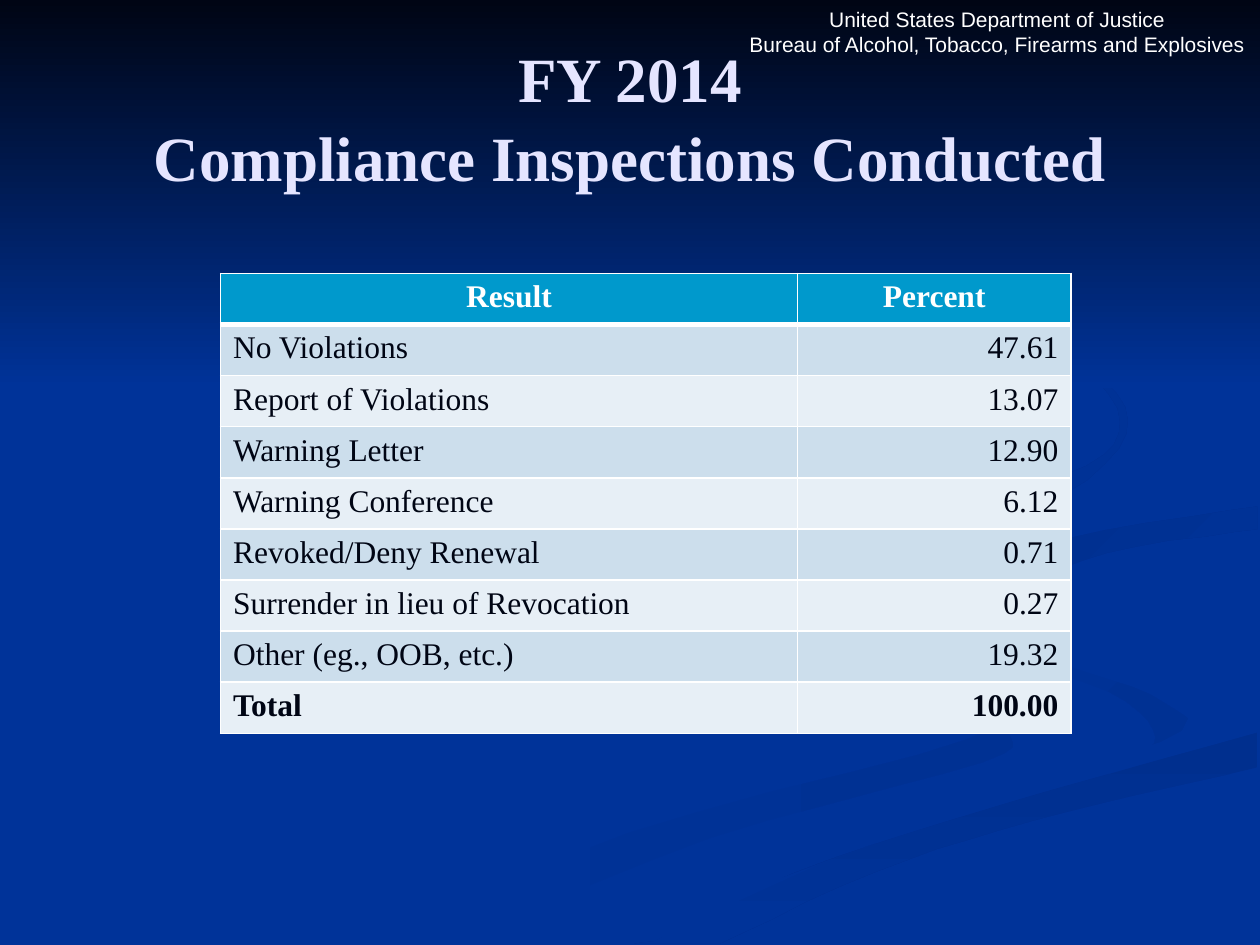
from dataclasses import dataclass

from lxml.etree import SubElement
from pptx import Presentation
from pptx.dml.color import RGBColor as Rgb
from pptx.enum.shapes import MSO_SHAPE as Shape
from pptx.enum.text import MSO_ANCHOR as Anchor, PP_ALIGN as Align
from pptx.oxml.ns import qn
from pptx.util import Pt

PX = 9144
CURVE_STEPS = 5


@dataclass(frozen=True)
class Theme:
    blue: str = "003399"
    shade: str = "002F8E"
    soft_shade: str = "003193"
    ink: str = "000514"
    white: str = "FFFFFF"
    lavender: str = "E5E5FF"
    header: str = "0099CC"
    bands: tuple = ("CCDEEC", "E7EFF6")
    sans: str = "Arial"
    serif: str = "Times New Roman"
    agency_size: int = 12
    title_size: int = 36
    table_size: int = 18


THEME = Theme()

RIBBONS = [
    (THEME.blue, THEME.soft_shade, 0, [
        [(781, 553), (642, 507), (575, 459)],
        [(570, 468), (611, 499), (781, 556), (767, 587), (499, 661), (300, 749)],
        [(361, 749), (564, 665), (780, 605), (800, 581), (781, 553)]]),
    (THEME.blue, THEME.soft_shade, 45, [
        [(943, 570), (870, 530), (758, 498), (724, 464)],
        [(724, 466), (755, 505), (880, 549), (917, 585), (894, 605)],
        [(894, 605), (932, 589), (943, 570)]]),
    (THEME.shade, THEME.blue, 90, [
        [(503, 749), (571, 749)],
        [(571, 749), (695, 692), (821, 651), (998, 609)],
        [(998, 581), (797, 638), (630, 693), (519, 747)]]),
    (THEME.blue, THEME.blue, 0, [
        [(999, 387), (770, 427), (725, 464), (793, 509), (943, 570),
         (812, 625), (477, 749)],
        [(519, 747), (696, 669), (999, 581)],
        [(999, 538), (848, 503), (781, 463), (865, 424), (999, 402)]]),
    (THEME.shade, THEME.blue, 45, [
        [(998, 402), (849, 427), (781, 460), (826, 496)],
        [(826, 496), (805, 472), (878, 439), (998, 420)]]),
    (THEME.shade, THEME.blue, 45, [
        [(762, 233), (864, 291), (894, 344), (825, 402), (683, 430),
         (593, 470), (622, 500)],
        [(622, 500), (577, 462), (649, 420), (842, 378), (889, 335),
         (846, 279), (762, 233)]]),
]

RESULTS = {
    "Result": "Percent",
    "No Violations": "47.61",
    "Report of Violations": "13.07",
    "Warning Letter": "12.90",
    "Warning Conference": "6.12",
    "Revoked/Deny Renewal": "0.71",
    "Surrender in lieu of Revocation": "0.27",
    "Other (eg., OOB, etc.)": "19.32",
    "Total": "100.00",
}


def scaled(box):
    return [length * PX for length in box]


def set_all(target, values):
    for name, value in values.items():
        setattr(target, name, value)


def format_paragraph(paragraph, color, align, **font):
    paragraph.alignment = align
    set_all(paragraph.font, font)
    paragraph.font.color.rgb = Rgb.from_string(color)


def paint_gradient(shape, start, end, angle):
    shape.shadow.inherit = False
    shape.line.fill.background()
    shape.fill.gradient()
    shape.fill.gradient_angle = -angle % 360
    for stop, color, position in zip(shape.fill.gradient_stops, (start, end), (0, 1)):
        stop.color.rgb = Rgb.from_string(color)
        stop.position = position


def spline(before, start, end, after, t):
    return (start + t * (end - before) / 2
            + t ** 2 * (2 * before - 5 * start + 4 * end - after) / 2
            + t ** 3 * (3 * start - before - 3 * end + after) / 2)


def smooth_edge(points):
    padded = [points[0], *points, points[-1]]
    curve = [points[0]]
    for window in zip(padded, padded[1:], padded[2:], padded[3:]):
        for step in range(1, CURVE_STEPS + 1):
            curve.append(tuple(round(spline(*axis, step / CURVE_STEPS))
                               for axis in zip(*window)))
    return curve


def add_backdrop(slide, box):
    left, top, width, height = scaled(box)
    slide.background.fill.solid()
    slide.background.fill.fore_color.rgb = Rgb.from_string(THEME.blue)
    for start, end, angle, edges in RIBBONS:
        outline = [point for edge in edges for point in smooth_edge(edge)]
        builder = slide.shapes.build_freeform(*outline[0], scale=PX)
        builder.add_line_segments(outline[1:], close=True)
        paint_gradient(builder.convert_to_shape(left, top), start, end, angle)
    sky = slide.shapes.add_shape(Shape.RECTANGLE, left, top, width, 308 * PX)
    paint_gradient(sky, THEME.ink, THEME.blue, 90)


def add_lines(slide, box, lines, anchor, color, space_before=0, **font):
    frame = slide.shapes.add_textbox(*scaled(box)).text_frame
    set_all(frame, {"word_wrap": True, "vertical_anchor": anchor,
                    "margin_left": 0, "margin_right": 0})
    frame.text = "\n".join(lines)
    for paragraph in frame.paragraphs:
        format_paragraph(paragraph, color, Align.CENTER, **font)
    frame.paragraphs[-1].space_before = Pt(space_before)


def add_borders(cell, widths):
    properties = cell._tc.get_or_add_tcPr()
    for side, width in widths.items():
        line = SubElement(properties, qn(f"a:ln{side}"), w=str(Pt(width)))
        fill = SubElement(line, qn("a:solidFill"))
        SubElement(fill, qn("a:srgbClr"), val=THEME.white)


def add_results_table(slide, box):
    table = slide.shapes.add_table(len(RESULTS), 2, *scaled(box)).table
    for column, width in zip(table.columns, (458, box[2] - 458)):
        column.width = width * PX
    for row, values in enumerate(RESULTS.items()):
        is_header = row == 0
        fill = THEME.header if is_header else THEME.bands[(row - 1) % 2]
        for column, value in enumerate(values):
            cell = table.cell(row, column)
            add_borders(cell, {"L": 1, "R": 1, "T": 3 if row == 1 else 1,
                               "B": 3 if is_header else 1})
            cell.fill.solid()
            cell.fill.fore_color.rgb = Rgb.from_string(fill)
            cell.text = value
            align = Align.CENTER if is_header else (Align.LEFT, Align.RIGHT)[column]
            format_paragraph(cell.text_frame.paragraphs[0],
                             THEME.white if is_header else THEME.ink, align,
                             name=THEME.serif, size=Pt(THEME.table_size),
                             bold=row in (0, len(RESULTS) - 1))


def main():
    presentation = Presentation()
    set_all(presentation, {"slide_width": 1000 * PX, "slide_height": 750 * PX})
    slide = presentation.slides.add_slide(presentation.slide_layouts[6])
    add_backdrop(slide, (0, 0, 1000, 750))
    add_lines(slide, (583, 6, 417, 44),
              ["United States Department of Justice",
               "Bureau of Alcohol, Tobacco, Firearms and Explosives"],
              Anchor.BOTTOM, THEME.white,
              name=THEME.sans, size=Pt(THEME.agency_size))
    add_lines(slide, (50, 30, 900, 125),
              ["FY 2014", "Compliance Inspections Conducted"],
              Anchor.MIDDLE, THEME.lavender, space_before=2,
              name=THEME.serif, size=Pt(THEME.title_size), bold=True)
    add_results_table(slide, (175, 217, 675, 365))
    presentation.save("out.pptx")


if __name__ == "__main__":
    main()
